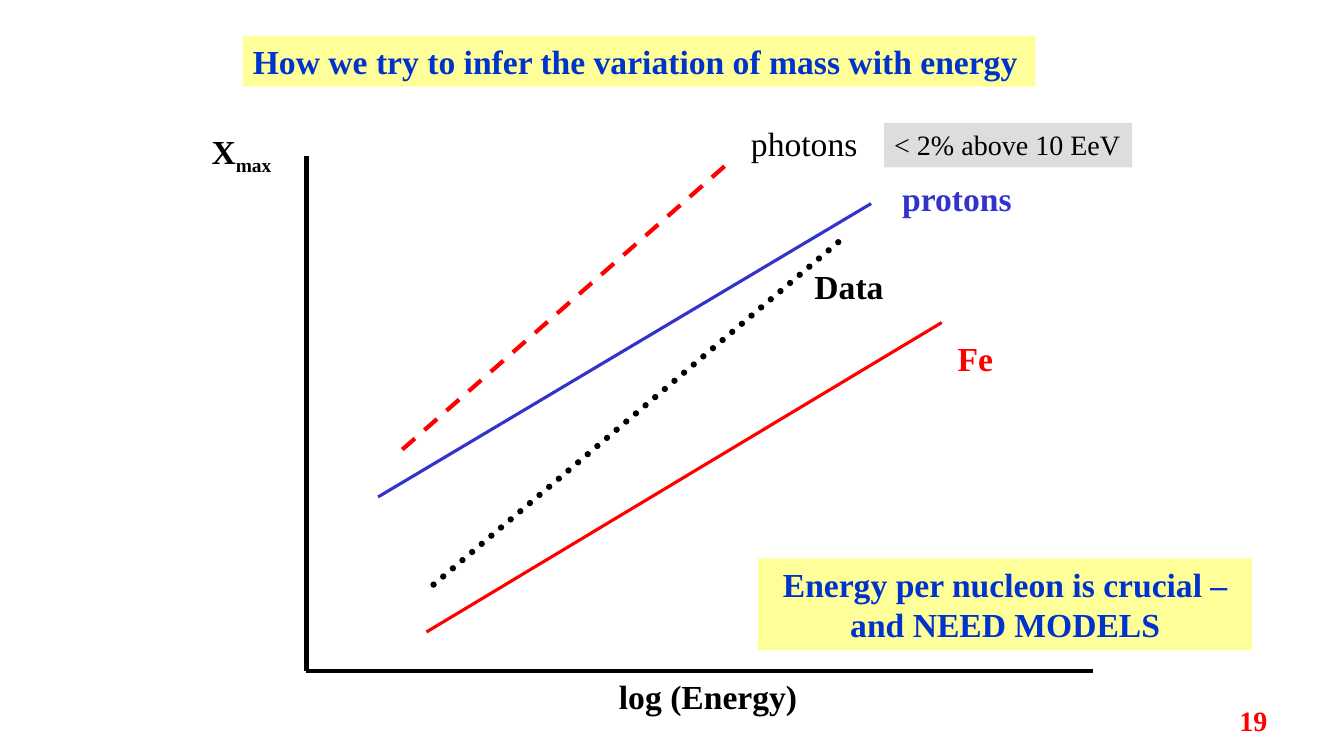
from dataclasses import dataclass

from lxml.etree import SubElement
from pptx import Presentation
from pptx.dml.color import RGBColor as Rgb
from pptx.enum.dml import MSO_LINE_DASH_STYLE as Dash
from pptx.enum.shapes import MSO_CONNECTOR as Connector
from pptx.enum.text import MSO_ANCHOR as Anchor, PP_ALIGN as Align
from pptx.oxml.ns import qn
from pptx.util import Inches, Pt


@dataclass(frozen=True)
class Theme:
    """Colours, font and type sizes of the slide."""
    font: str = "Times New Roman"
    body: int = 24
    small: int = 20
    black: str = "000000"
    red: str = "FF0000"
    blue: str = "3333CC"
    heading: str = "0033CC"
    yellow: str = "FFFF99"
    grey: str = "DDDDDD"


class SlideBuilder:
    """Draws lines, labels and filled boxes on one slide."""

    def __init__(self, slide, theme):
        self.shapes = slide.shapes
        self.theme = theme

    def line(self, start, end, color, width, dash=None, round_cap=False):
        """Draw a straight line between two points."""
        ends = [Inches(value) for value in (*start, *end)]
        stroke = self.shapes.add_connector(Connector.STRAIGHT, *ends)
        stroke.line.color.rgb = Rgb.from_string(color)
        stroke.line.width = Pt(width)
        if dash:
            stroke.line.dash_style = dash
        if round_cap:
            stroke.line._get_or_add_ln().set("cap", "rnd")
        SubElement(stroke._element.spPr, qn("a:effectLst"))

    def label(self, text, box, color, size=None, bold=True, align=Align.LEFT,
              fill=None, wrap=False, anchor=Anchor.TOP, subscript=None):
        """Place text, with an optional fill and subscript."""
        area = self.shapes.add_textbox(*[Inches(value) for value in box])
        if fill:
            area.fill.solid()
            area.fill.fore_color.rgb = Rgb.from_string(fill)
        frame = area.text_frame
        frame.word_wrap = wrap
        frame.vertical_anchor = anchor
        paragraph = frame.paragraphs[0]
        paragraph.alignment = align
        paragraph.add_run().text = text
        font = paragraph.font
        font.name = self.theme.font
        font.size = Pt(size or self.theme.body)
        font.bold = bold
        font.color.rgb = Rgb.from_string(color)
        if subscript:
            lowered = paragraph.add_run()
            lowered.text = subscript
            lowered._r.get_or_add_rPr().set("baseline", "-25000")


def main():
    """Build and save the slide."""
    deck = Presentation()
    deck.slide_width, deck.slide_height = Inches(13.33), Inches(7.5)
    theme = Theme()
    page = SlideBuilder(deck.slides.add_slide(deck.slide_layouts[6]), theme)

    origin = (3.04, 6.66)
    for axis_end in ((3.04, 1.55), (10.84, 6.66)):
        page.line(origin, axis_end, theme.black, 3)

    page.line((3.75, 4.93), (8.64, 2.02), theme.blue, 2.25)
    page.line((4.23, 6.27), (9.34, 3.2), theme.red, 2.25)
    page.line((4.3, 5.8), (8.4, 2.33), theme.black, 4.5, Dash.ROUND_DOT, True)
    page.line((3.99, 4.46), (7.22, 1.62), theme.red, 3, Dash.DASH)

    page.label("photons", (7.35, 1.17, 1.27, 0.5), theme.black, bold=False)
    for text, box, color in (
        ("protons", (8.85, 1.72, 1.3, 0.5), theme.blue),
        ("Fe", (9.4, 3.3, 0.56, 0.5), theme.red),
        ("Data", (7.98, 2.59, 0.93, 0.5), theme.black),
        ("log (Energy)", (6.04, 6.66, 1.99, 0.5), theme.black),
    ):
        page.label(text, box, color)
    page.label("X", (2, 1.25, 0.87, 0.5), theme.black, subscript="max")

    page.label("How we try to infer the variation of mass with energy",
               (2.41, 0.36, 7.86, 0.5), theme.heading, fill=theme.yellow)
    page.label("Energy per nucleon is crucial – and NEED MODELS",
               (7.52, 5.54, 4.9, 0.91), theme.heading, fill=theme.yellow,
               align=Align.CENTER, wrap=True)
    page.label("< 2% above 10 EeV", (8.77, 1.22, 2.46, 0.44), theme.black,
               theme.small, bold=False, fill=theme.grey)
    page.label("19", (9.56, 6.95, 3.11, 0.4), theme.red, theme.small,
               align=Align.RIGHT, wrap=True, anchor=Anchor.MIDDLE)
    deck.save("out.pptx")


if __name__ == "__main__":
    main()
